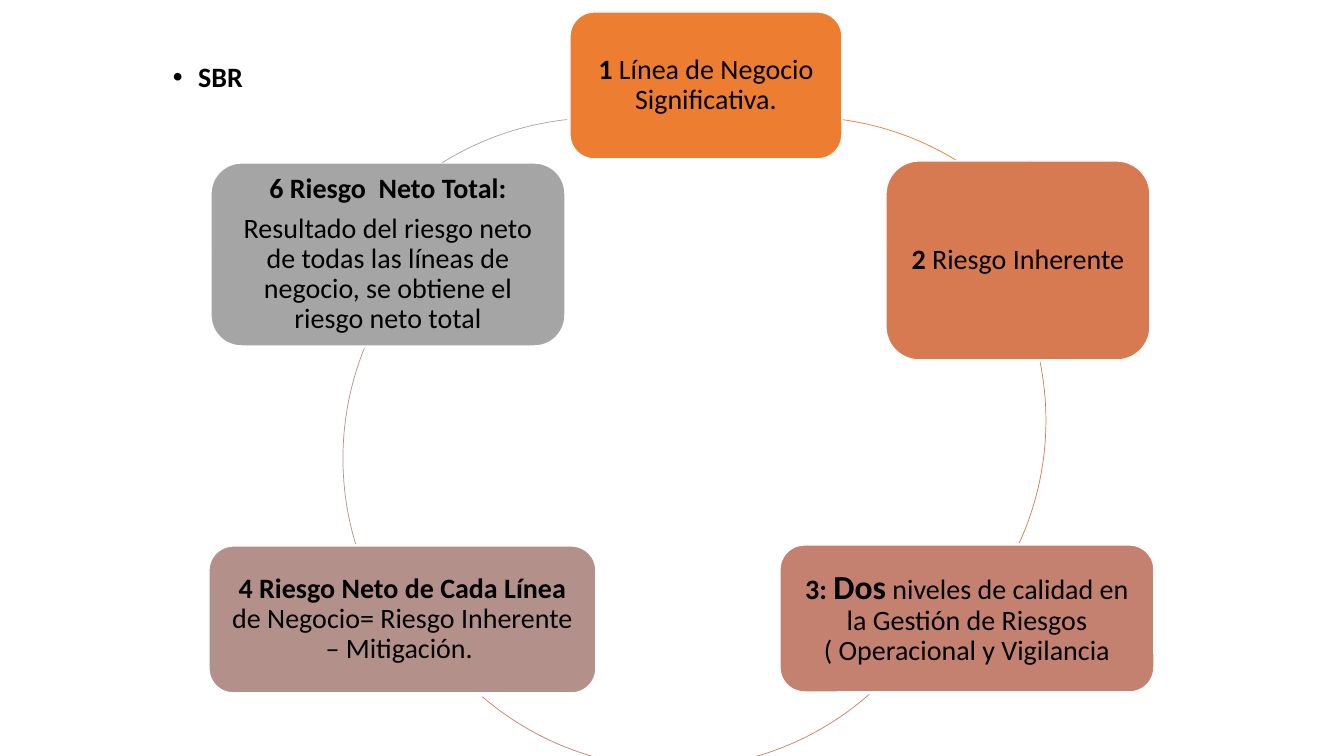
from dataclasses import dataclass

from lxml import etree
from pptx import Presentation
from pptx import util as u
from pptx.dml.color import RGBColor
from pptx.enum import shapes, text
from pptx.oxml import ns

SCALE = 914400 / 100.8
RING = 589
INSET = 8
FONT = "Calibri"
MARGINS = ("margin_left", "margin_top", "margin_right", "margin_bottom")


@dataclass(frozen=True)
class Run:
    words: str
    bold: bool = False
    size: int = 20


@dataclass(frozen=True)
class Step:
    """A box, and the arc that leads on from it or into it.

    ring is the top left of the arc's circle; sweep is its start and end
    in degrees, clockwise from three o'clock.
    """
    box: tuple[int, int, int, int]
    color: str
    paras: list[list[Run]]
    ring: tuple[int, int]
    sweep: tuple[float, float]


STEPS = [
    Step((570, 12, 272, 147), "ED7D31",
         [[Run("1", True), Run(" Línea de Negocio Significativa.")]],
         (508, 117), (277.9, 301.7)),
    Step((886, 161, 264, 199), "D87A51",
         [[Run("2", True), Run(" Riesgo Inherente")]],
         (457, 126), (348.6, 24.6)),
    Step((780, 545, 374, 147), "C48170",
         [[Run("3: ", True), Run("Dos", True, 24),
           Run(" niveles de calidad en la Gestión de Riesgos ( Operacional y Vigilancia")]],
         (380, 179), (48.6, 130.7)),
    Step((209, 546, 387, 147), "B4908B",
         [[Run("4 Riesgo Neto de Cada Línea ", True),
           Run("de Negocio= Riesgo Inherente – Mitigación. ")]],
         (343, 164), (163.1, 202)),
    Step((211, 163, 354, 183), "A5A5A5",
         [[Run("6 Riesgo  Neto Total:", True)],
          [Run("Resultado del riesgo neto de todas las líneas de negocio, "
               "se obtiene el riesgo neto total")]],
         (304, 118), (238, 263.9)),
]


def px(n: int) -> int:
    return round(n * SCALE)


def rgb(code: str) -> RGBColor:
    return RGBColor.from_string(code)


def apply(item, values: dict) -> None:
    for name, value in values.items():
        setattr(item, name, value)


def write(para, runs: list[Run]) -> None:
    para.line_spacing = 0.9
    for part in runs:
        run = para.add_run()
        run.text = part.words
        apply(run.font, {"name": FONT, "size": u.Pt(part.size), "bold": part.bold})
        run.font.color.rgb = rgb("000000")


def bullet(para) -> None:
    props = para._p.get_or_add_pPr()
    props.set("marL", str(u.Inches(0.25)))
    props.set("indent", str(-u.Inches(0.25)))
    etree.SubElement(props, ns.qn("a:buFont")).set("typeface", "Arial")
    etree.SubElement(props, ns.qn("a:buChar")).set("char", "•")


def title(slide) -> None:
    frame = slide.shapes.add_textbox(*map(px, (163, 58, 1149, 583))).text_frame
    frame.word_wrap = True
    para = frame.paragraphs[0]
    write(para, [Run("SBR", True)])
    bullet(para)


def outline(shape, color: str, width: float) -> None:
    shape.shadow.inherit = False
    shape.line.color.rgb = rgb(color)
    shape.line.width = u.Pt(width)


def card(slide, step: Step) -> None:
    kind = shapes.MSO_SHAPE.ROUNDED_RECTANGLE
    shape = slide.shapes.add_shape(kind, *map(px, step.box))
    outline(shape, "FFFFFF", 1)
    shape.fill.solid()
    shape.fill.fore_color.rgb = rgb(step.color)
    frame = shape.text_frame
    apply(frame, {"word_wrap": True, "vertical_anchor": text.MSO_ANCHOR.MIDDLE})
    apply(frame, dict.fromkeys(MARGINS, px(INSET)))
    for i, runs in enumerate(step.paras):
        para = frame.add_paragraph() if i else frame.paragraphs[0]
        write(para, runs)
        apply(para, {"alignment": text.PP_ALIGN.CENTER, "space_after": u.Pt(7)})


def arc(slide, step: Step) -> None:
    place = map(px, (*step.ring, RING, RING))
    shape = slide.shapes.add_shape(shapes.MSO_SHAPE.ARC, *place)
    outline(shape, step.color, 0.5)
    shape.fill.background()
    for i, angle in enumerate(step.sweep):
        shape.adjustments[i] = angle * 0.6  # 60000 units a degree, over 100000


def main() -> None:
    deck = Presentation()
    apply(deck, {"slide_width": px(1344), "slide_height": px(756)})
    slide = deck.slides.add_slide(deck.slide_layouts[6])
    title(slide)
    for step in STEPS:
        card(slide, step)
        arc(slide, step)
    deck.save("out.pptx")


if __name__ == "__main__":
    main()
